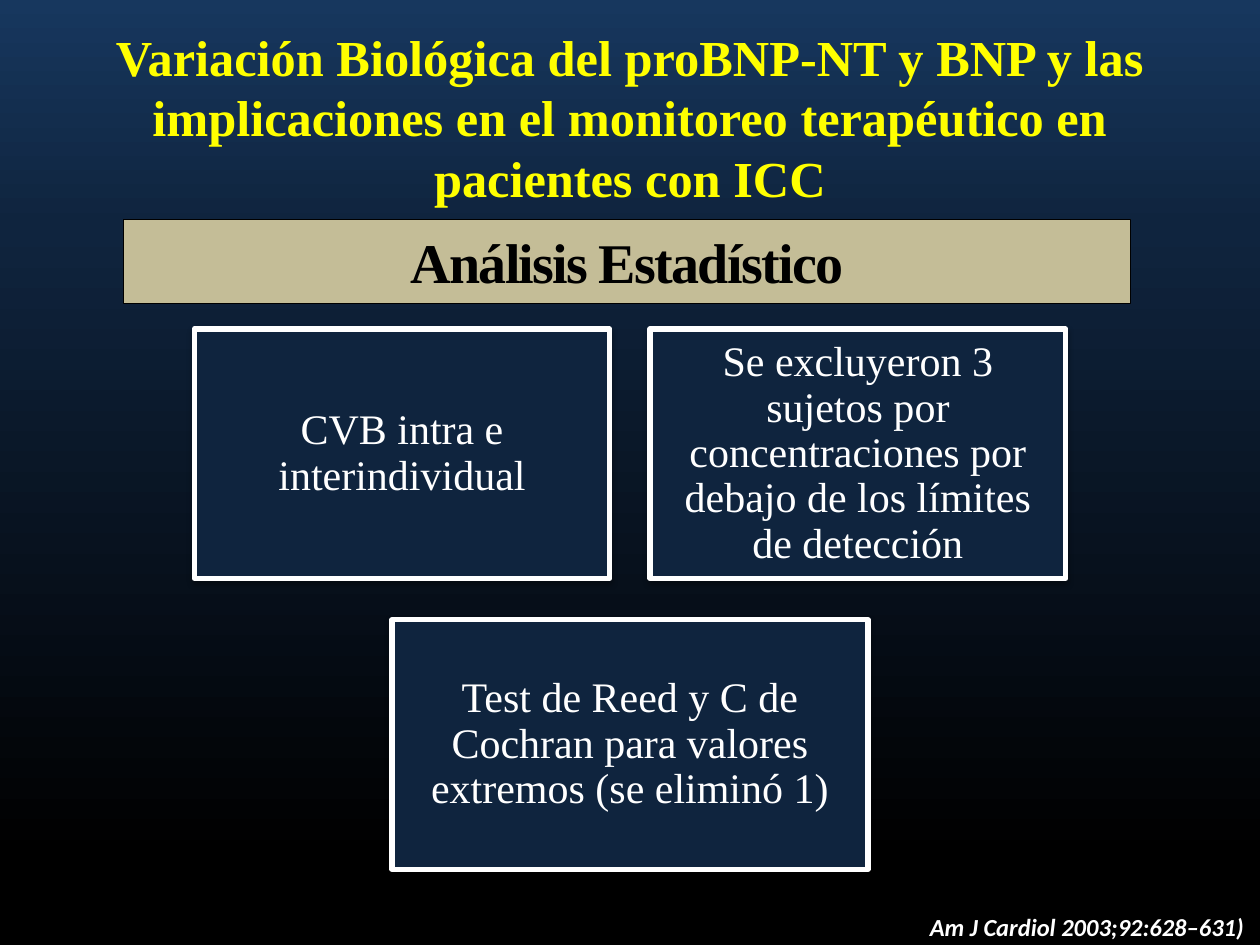
import copy
import lxml.etree
import pptx
import pptx.dml.color
import pptx.enum.shapes
import pptx.enum.text
import pptx.oxml.ns
import pptx.util

Pt = pptx.util.Pt
qn = pptx.oxml.ns.qn
TEXT = pptx.enum.text
SERIF = "Times New Roman"
COLORS = {"top": "17375E", "navy": "0F243E", "black": "000000",
          "white": "FFFFFF", "yellow": "FFFF00", "tan": "C4BD97"}


def color(name):
    """Return the named colour."""
    return pptx.dml.color.RGBColor.from_string(COLORS[name])


def write(shape, text, size, tint, font=SERIF, bold=False, italic=False):
    """Set centred, wrapped text in a shape and return its run."""
    frame = shape.text_frame
    frame.text = text
    frame.word_wrap = True
    frame.auto_size = TEXT.MSO_AUTO_SIZE.NONE
    frame.vertical_anchor = TEXT.MSO_ANCHOR.MIDDLE
    para = frame.paragraphs[0]
    para.alignment = TEXT.PP_ALIGN.CENTER
    run = para.runs[0]
    run.font.name, run.font.size = font, Pt(size)
    run.font.bold, run.font.italic = bold, italic
    run.font.color.rgb = color(tint)
    return run


def panel(slide, box, fill, edge, width):
    """Add a filled and outlined rectangle."""
    kind = pptx.enum.shapes.MSO_SHAPE.RECTANGLE
    shape = slide.shapes.add_shape(kind, *map(Pt, box))
    shape.shadow.inherit = False
    shape.fill.solid()
    shape.fill.fore_color.rgb = color(fill)
    shape.line.color.rgb = color(edge)
    shape.line.width = Pt(width)
    return shape


def shade(shape):
    """Give a shape a soft shadow below it."""
    root = shape.element.spPr.find(qn("a:effectLst"))
    cast = lxml.etree.SubElement(
        root, qn("a:outerShdw"), blurRad=str(Pt(3.1)), dist=str(Pt(1.8)),
        dir="5400000", rotWithShape="0")
    tint = lxml.etree.SubElement(cast, qn("a:srgbClr"), val=COLORS["black"])
    lxml.etree.SubElement(tint, qn("a:alpha"), val="35000")


def backdrop(slide):
    """Fill the background with a vertical gradient."""
    fill = slide.background.fill
    fill.gradient()
    fill.gradient_angle = 270
    stops = next(slide.element.iter(qn("a:gsLst")))
    stops.append(copy.deepcopy(stops[0]))
    marks = ((0, "top"), (0.24, "navy"), (0.91, "black"))
    for stop, (place, name) in zip(fill.gradient_stops, marks):
        stop.position = place
        stop.color.rgb = color(name)


def heading(slide, box):
    """Place the slide title."""
    title = slide.shapes.title
    title.left, title.top, title.width, title.height = map(Pt, box)
    write(title, "Variación Biológica del proBNP-NT y BNP y las implicaciones "
          "en el monitoreo terapéutico en pacientes con ICC",
          28.8, "yellow", bold=True)


def banner(slide, box):
    """Place the section banner."""
    shape = panel(slide, box, "tan", "black", 0.75)
    run = write(shape, "Análisis Estadístico", 32, "black", bold=True)
    run.font._element.set("spc", "-100")


def cards(slide, box):
    """Place two cards above a wider centred one."""
    left, top, width, height = box
    gap, wide, tall = 23, 272, 142.5
    half = (width - gap) / 2
    low = top + height - tall
    items = (
        (left, top, half, "CVB intra e interindividual"),
        (left + half + gap, top, half, "Se excluyeron 3 sujetos por "
         "concentraciones por debajo de los límites de detección"),
        (left + (width - wide) / 2, low, wide, "Test de Reed y C de Cochran "
         "para valores extremos (se eliminó 1)"),
    )
    for x, y, span, text in items:
        card = panel(slide, (x, y, span, tall), "navy", "white", 3)
        shade(card)
        write(card, text, 24, "white")
        card.text_frame.paragraphs[0].line_spacing = 0.9
        card.text_frame.margin_top = card.text_frame.margin_bottom = Pt(7.2)


def source(slide, box):
    """Place the journal reference."""
    note = slide.shapes.add_textbox(*map(Pt, box))
    write(note, "Am J Cardiol 2003;92:628–631)", 14, "white", "Calibri",
          bold=True, italic=True)
    note.text_frame.word_wrap = False
    note.text_frame.vertical_anchor = TEXT.MSO_ANCHOR.TOP
    note.text_frame.paragraphs[0].alignment = TEXT.PP_ALIGN.LEFT


def main():
    """Build the slide and save it."""
    deck = pptx.Presentation()
    deck.slide_width, deck.slide_height = Pt(720), Pt(540)
    slide = deck.slides.add_slide(deck.slide_layouts[5])
    backdrop(slide)
    heading(slide, (36, 21.6, 648, 90))
    banner(slide, (70.6, 125.3, 575.3, 48.2))
    cards(slide, (111, 188, 498, 308.7))
    source(slide, (524.2, 517.7, 195.8, 24.5))
    deck.save("out.pptx")


if __name__ == "__main__":
    main()
